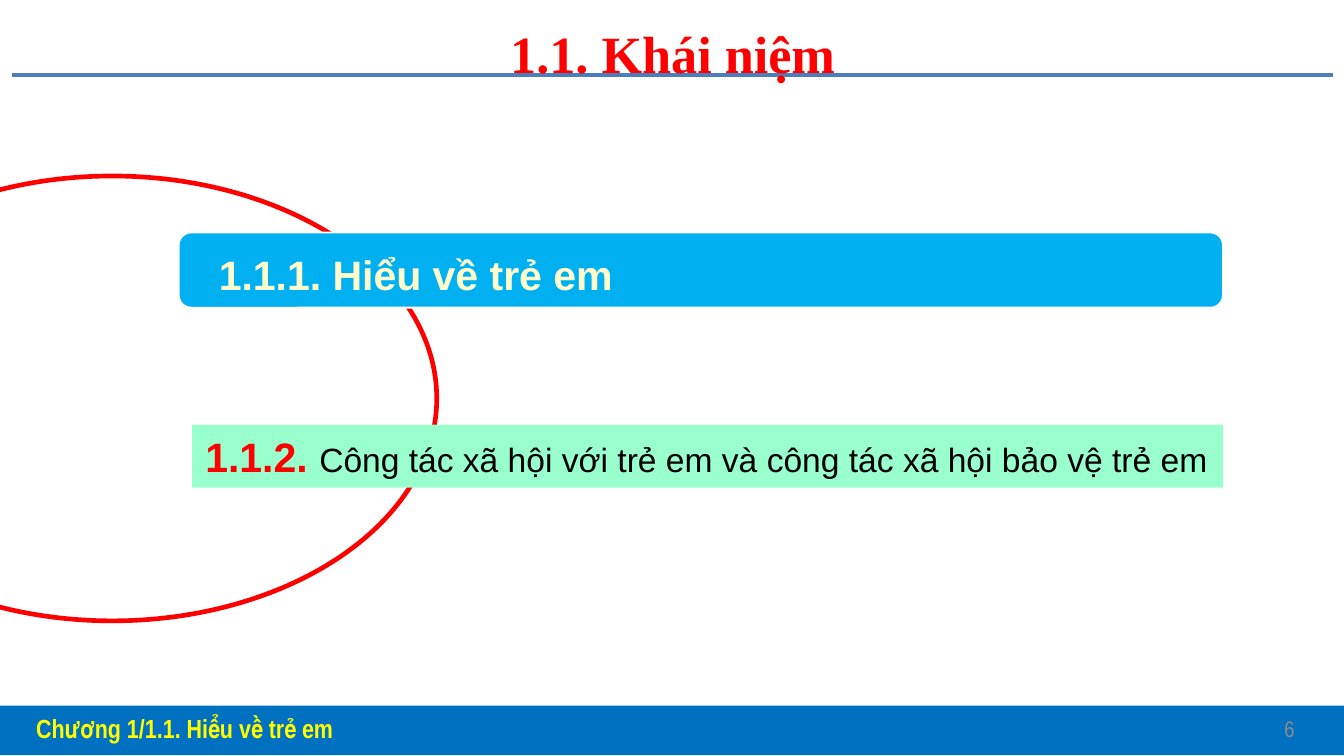
from pptx import Presentation
from pptx.dml.color import RGBColor
from pptx.enum.shapes import MSO_CONNECTOR, MSO_SHAPE
from pptx.enum.text import MSO_ANCHOR, PP_ALIGN
from pptx.oxml.ns import qn
from pptx.util import Inches, Pt
from lxml.etree import SubElement

WHITE = RGBColor(0xFF, 0xFF, 0xFF)
RED = RGBColor(0xFF, 0x00, 0x00)
BLACK = RGBColor(0x00, 0x00, 0x00)
GRAY = RGBColor(0x8C, 0x8C, 0x8C)
YELLOW = RGBColor(0xFF, 0xFF, 0x00)
CREAM = RGBColor(0xFF, 0xFF, 0xCC)
MINT = RGBColor(0x99, 0xFF, 0xCC)
SKY = RGBColor(0x00, 0xB0, 0xF0)
BLUE = RGBColor(0x00, 0x70, 0xC0)
RULE_BLUE = RGBColor(0x4B, 0x7E, 0xBC)


def add_shape(s, kind, x, y, w, h, fill=None, line=None, line_width=1):
    """Add a flat preset shape with an optional fill and outline."""
    sp = s.shapes.add_shape(kind, Inches(x), Inches(y), Inches(w), Inches(h))
    sp.shadow.inherit = False
    if fill is None:
        sp.fill.background()
    else:
        sp.fill.solid()
        sp.fill.fore_color.rgb = fill
    if line is None:
        sp.line.fill.background()
    else:
        sp.line.color.rgb = line
        sp.line.width = Pt(line_width)
    return sp


def write(sp, runs, align=PP_ALIGN.LEFT, anchor=MSO_ANCHOR.TOP):
    """Write runs of (text, font, size, colour, bold) as one paragraph."""
    tf = sp.text_frame
    tf.word_wrap = True
    tf.vertical_anchor = anchor
    p = tf.paragraphs[0]
    p.alignment = align
    for text, font, size, color, bold in runs:
        r = p.add_run()
        r.text = text
        r.font.name = font
        r.font.size = Pt(size)
        r.font.color.rgb = color
        r.font.bold = bold


def add_text(s, x, y, w, h, runs, **layout):
    """Add a wrapping text box."""
    sp = s.shapes.add_textbox(Inches(x), Inches(y), Inches(w), Inches(h))
    write(sp, runs, **layout)


def add_header(s, x, y, w, h):
    """Draw the rule and the centred slide title."""
    rule_y = Inches(y + 0.5)
    rule = s.shapes.add_connector(
        MSO_CONNECTOR.STRAIGHT, Inches(x - 0.08), rule_y, Inches(x + w + 0.08), rule_y)
    rule.line.color.rgb = RULE_BLUE
    rule.line.width = Pt(2)
    SubElement(rule._element.spPr, qn("a:effectLst"))
    add_text(s, x, y, w, h, [("1.1. Khái niệm", "Times New Roman", 28, RED, True)],
             align=PP_ALIGN.CENTER, anchor=MSO_ANCHOR.MIDDLE)


def add_footer(s, x, y, w, h):
    """Draw the footer band with the chapter and the slide number."""
    add_shape(s, MSO_SHAPE.RECTANGLE, x, y, w, h, BLUE)
    add_text(s, x + 8.35, y + 0.02, 1.42, 0.3, [("6", "Arial Narrow", 12, GRAY, False)],
             align=PP_ALIGN.RIGHT, anchor=MSO_ANCHOR.MIDDLE)
    add_text(s, x + 0.21, y, 9.4, 0.32,
             [("Chương 1/1.1. Hiểu về trẻ em", "Arial Narrow", 14, YELLOW, True)],
             align=PP_ALIGN.JUSTIFY)


def add_topics(s, x, y, w, h):
    """Draw the arc and the two topic bars that cross it."""
    add_shape(s, MSO_SHAPE.OVAL, x - 2.91, y, 4.83, h, line=RED, line_width=2.5)
    bar = add_shape(s, MSO_SHAPE.ROUNDED_RECTANGLE, x, y + 0.42, w, 0.56, SKY, WHITE)
    bar.adjustments[0] = 0.167
    add_text(s, x + 0.2, y + 0.5, w - 0.2, 0.47,
             [("1.1.1. Hiểu về trẻ em", "Arial", 22, CREAM, True)])
    box = add_shape(s, MSO_SHAPE.RECTANGLE, x + 0.1, y + 1.85, w - 0.1, 0.47, MINT)
    box.text_frame.margin_right = 0
    write(box, [
        ("1.1.2. ", "Arial", 22, RED, True),
        ("Công tác xã hội với trẻ em và công tác xã hội bảo vệ trẻ em",
         "Arial", 18, BLACK, False),
    ])


def main():
    """Build and save the slide."""
    prs = Presentation()
    prs.slide_width = Inches(10)
    prs.slide_height = prs.slide_width * 9 // 16
    s = prs.slides.add_slide(prs.slide_layouts[6])
    add_footer(s, -0.04, 5.25, 10.08, 0.37)
    add_header(s, 0.17, 0.06, 9.67, 0.67)
    add_topics(s, 1.33, 1.31, 7.77, 3.31)
    prs.save("out.pptx")


if __name__ == "__main__":
    main()
